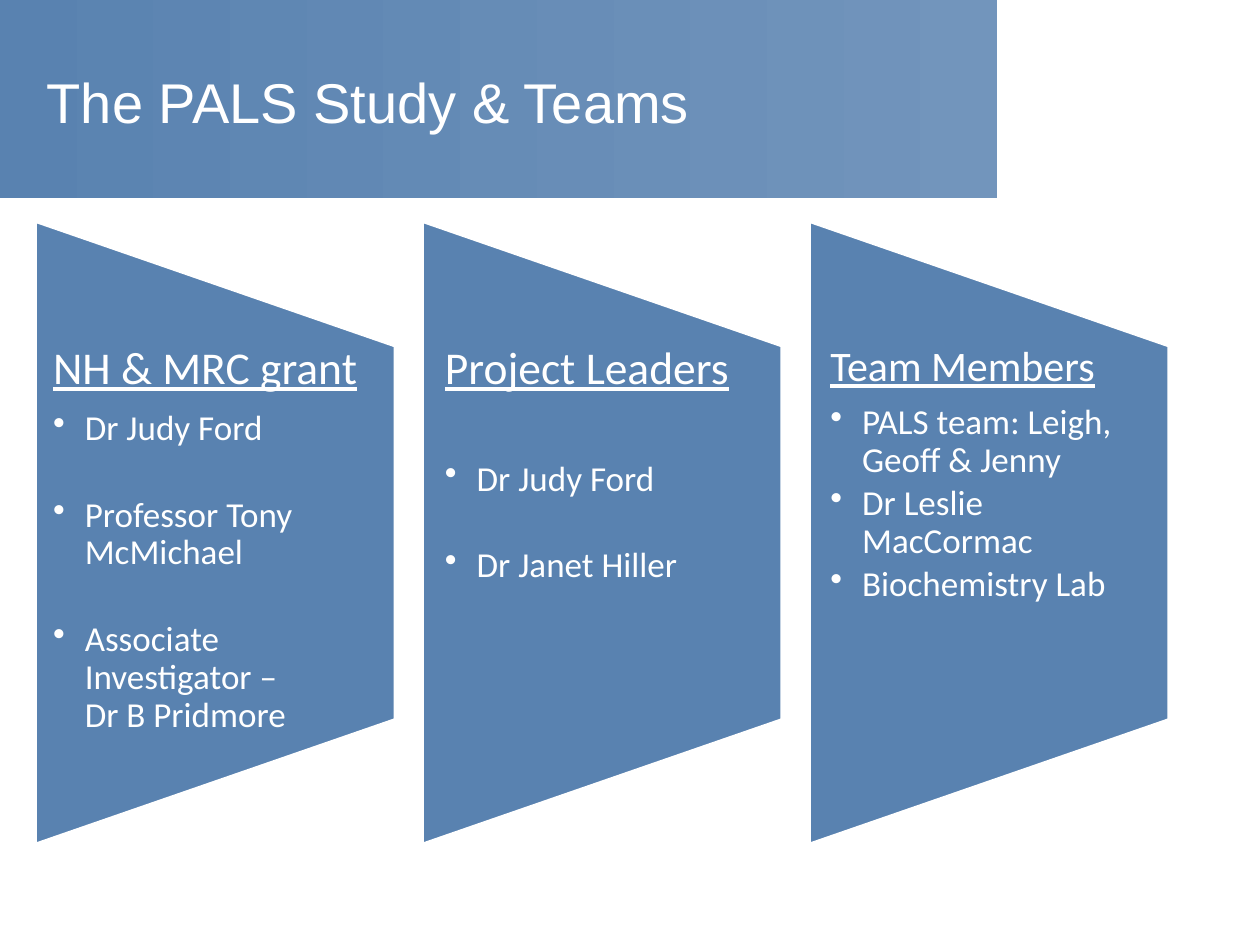
from lxml import etree
from pptx import Presentation
from pptx import util as u
from pptx.dml import color
from pptx.enum import shapes, text
from pptx.oxml import ns

# heading, heading size, side inset (cm), gap lines after heading and items, items
TEAMS = [
    ("NH & MRC grant", 26, 0.36, 0, 1,
     ["Dr Judy Ford", "Professor Tony McMichael",
      "Associate Investigator –\vDr B Pridmore"]),
    ("Project Leaders", 26, 0.46, 1, 1, ["Dr Judy Ford", "Dr Janet Hiller"]),
    ("Team Members", 24, 0.43, 0, 0,
     ["PALS team: Leigh, Geoff & Jenny", "Dr Leslie MacCormac",
      "Biochemistry Lab"]),
]
LEFT, PITCH, PANEL_W, PANEL_H, CENTER_Y = 0.71, 7.8, 7.26, 12.57, 10.74
TEXT_TOP, TEXT_H = 6.96, 7.54
ITEM_SIZE, ITEM_AFTER, GAP_LINE = 20, 3, 25


def rgb(value):
    return color.RGBColor.from_string(value)


class TeamSlide:
    blue, pale_blue, white = "5982B0", "7295BC", "FFFFFF"
    title_font, body_font = "Arial", "Calibri"

    def __init__(self, prs):
        self.s = prs.slides.add_slide(prs.slide_layouts[5])

    def format(self, p, font, size, underline=False):
        for r in p.runs:
            r.font.name = font
            r.font.size = u.Pt(size)
            r.font.color.rgb = rgb(self.white)
            r.font.underline = underline

    def title(self, words):
        sp = self.s.shapes.title
        sp.left, sp.top, sp.width, sp.height = map(
            u.Cm, (0.69, 0.76, 19, 2.57))
        tf = sp.text_frame
        tf.text = words
        tf.vertical_anchor = text.MSO_ANCHOR.MIDDLE
        p = tf.paragraphs[0]
        p.alignment = text.PP_ALIGN.LEFT
        self.format(p, self.title_font, 32)

    def banner(self):
        """Draw the shaded band behind the title."""
        sp = self.s.shapes.add_shape(
            shapes.MSO_SHAPE.RECTANGLE, 0, 0, u.Cm(20.1), u.Cm(4))
        sp.shadow.inherit = False
        sp.line.fill.background()
        sp.fill.gradient()
        sp.fill.gradient_angle = 0
        stops = sp.fill.gradient_stops
        for stop, position, shade in zip(
                stops, (0, 1), (self.blue, self.pale_blue)):
            stop.position = position
            stop.color.rgb = rgb(shade)
        self.s.shapes.title._element.addprevious(sp._element)

    def panel(self, left):
        """Draw a trapezoid turned so that its long side is on the left."""
        sp = self.s.shapes.add_shape(
            shapes.MSO_SHAPE.FLOWCHART_MANUAL_OPERATION,
            u.Cm(left + (PANEL_W - PANEL_H) / 2),
            u.Cm(CENTER_Y - PANEL_W / 2), u.Cm(PANEL_H), u.Cm(PANEL_W))
        sp.rotation = 270
        sp.shadow.inherit = False
        sp.fill.solid()
        sp.fill.fore_color.rgb = rgb(self.blue)
        sp.line.color.rgb = rgb(self.white)
        sp.line.width = u.Pt(2)

    def bullet(self, p):
        pPr = p._p.get_or_add_pPr()
        pPr.set("marL", str(u.Cm(0.64)))
        pPr.set("indent", str(u.Cm(-0.64)))
        etree.SubElement(pPr, ns.qn("a:buChar")).set("char", "•")

    def team(self, left, heading, size, inset, head_gap, item_gap, items):
        box = self.s.shapes.add_textbox(
            u.Cm(left), u.Cm(TEXT_TOP), u.Cm(PANEL_W), u.Cm(TEXT_H))
        tf = box.text_frame
        tf.word_wrap = True
        tf.margin_left = tf.margin_right = u.Cm(inset)
        tf.margin_top = tf.margin_bottom = 0
        p = tf.paragraphs[0]
        p.text = heading
        p.line_spacing = 0.9
        p.space_after = u.Pt(round(size * 0.35) + head_gap * (GAP_LINE + 4))
        self.format(p, self.body_font, size, underline=True)
        for item in items:
            p = tf.add_paragraph()
            p.text = item
            p.level = 1
            self.bullet(p)
            p.line_spacing = 0.9
            p.space_after = u.Pt(ITEM_AFTER + item_gap * GAP_LINE)
            self.format(p, self.body_font, ITEM_SIZE)


def main():
    prs = Presentation()
    prs.slide_width, prs.slide_height = u.Cm(25.4), u.Cm(19.05)
    slide = TeamSlide(prs)
    slide.title("The PALS Study & Teams")
    slide.banner()
    for i, team in enumerate(TEAMS):
        left = LEFT + i * PITCH
        slide.panel(left)
        slide.team(left, *team)
    prs.save("out.pptx")


if __name__ == "__main__":
    main()
